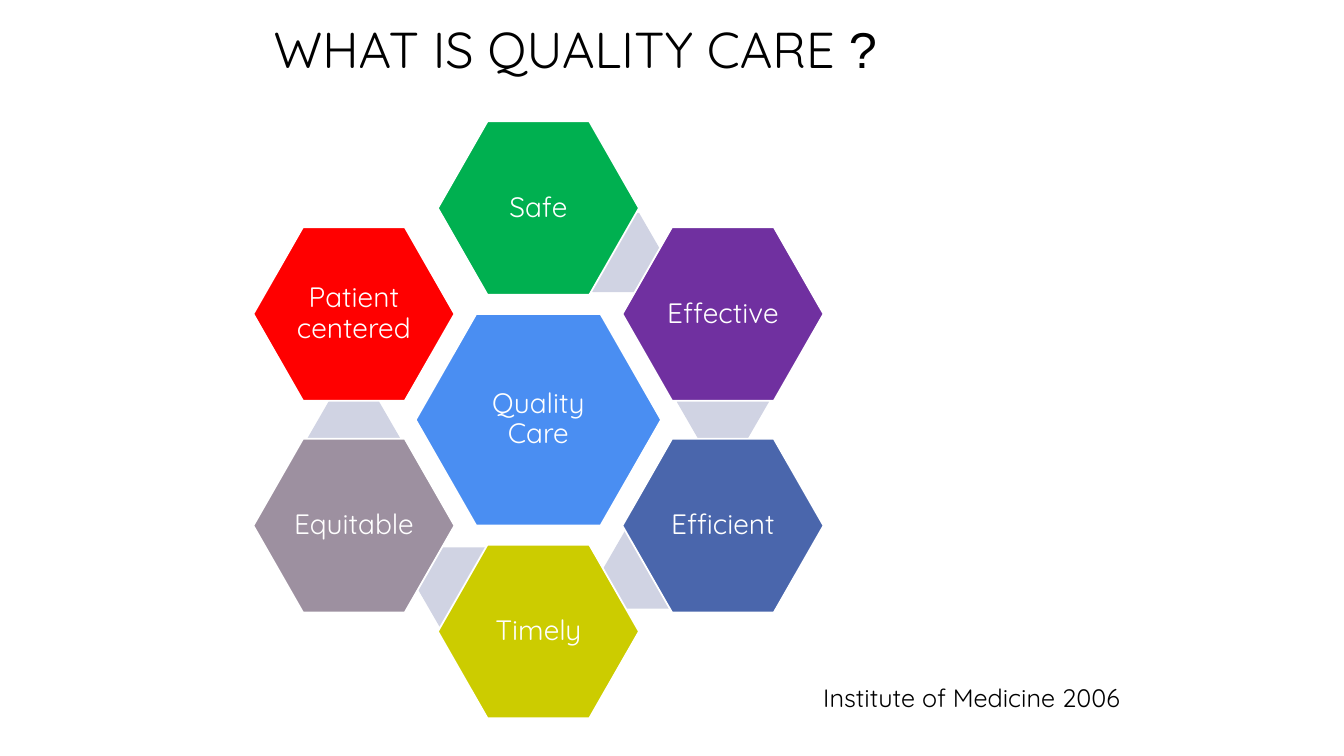
from pptx import Presentation
from pptx.dml.color import RGBColor
from pptx.enum.shapes import MSO_SHAPE
from pptx.enum.text import MSO_ANCHOR, PP_ALIGN
from pptx.util import Inches, Pt

COLORS = {
    "white": "FFFFFF", "black": "000000", "link": "D0D3E3", "core": "4A8EF2",
    "safe": "00B050", "effective": "7030A0", "efficient": "4A66AC",
    "timely": "CCCC00", "equitable": "9D90A0", "patient": "FF0000",
}

# Sizes in columns and rows of the honeycomb grid
CORE_SIZE = (1.33, 2)
PETAL_SIZE = (1.09, 1.64)
LINK_SIZE = (0.5, 0.75)

# Label, colour, petal centre, centre of the link beneath it
PETALS = [
    ("Safe", "safe", (0, -2), (0.42, -1.58)),
    ("Effective", "effective", (1, -1), (1, -0.17)),
    ("Efficient", "efficient", (1, 1), (0.6, 1.41)),
    ("Timely", "timely", (0, 2), (-0.41, 1.58)),
    ("Equitable", "equitable", (-1, 1), (-1, 0.17)),
    ("Patient centered", "patient", (-1, -1), None),
]


def color(name):
    return RGBColor.from_string(COLORS[name])


def write(frame, *runs, size=20, ink="white", align=PP_ALIGN.LEFT,
          anchor=MSO_ANCHOR.TOP, spacing=1.0):
    """Fill a text frame with one paragraph of (text, font) runs."""
    frame.word_wrap = True
    frame.vertical_anchor = anchor
    paragraph = frame.paragraphs[0]
    paragraph.alignment = align
    paragraph.line_spacing = spacing
    for text, typeface in runs:
        run = paragraph.add_run()
        run.text = text
        run.font.name = typeface
        run.font.size = Pt(size)
        run.font.color.rgb = color(ink)


class Honeycomb:
    """A slide on a grid whose origin is the centre of the honeycomb."""
    column, row = 1.83, 1.05
    center_x, center_y = 5.34, 4.165
    typeface = "Quicksand"

    def __init__(self, slide):
        self.slide = slide
        slide.background.fill.solid()
        slide.background.fill.fore_color.rgb = color("white")

    def box(self, left, top, width, height):
        """Turn grid units into slide lengths."""
        return (Inches(self.center_x + left * self.column),
                Inches(self.center_y + top * self.row),
                Inches(width * self.column), Inches(height * self.row))

    def hexagon(self, center, size, fill, slant=0.286):
        corner = [middle - extent / 2 for middle, extent in zip(center, size)]
        cell = self.slide.shapes.add_shape(MSO_SHAPE.HEXAGON,
                                           *self.box(*corner, *size))
        cell.adjustments[0] = slant
        cell.shadow.inherit = False
        cell.fill.solid()
        cell.fill.fore_color.rgb = color(fill)
        cell.line.fill.background()
        return cell

    def labelled_cell(self, label, center, size, fill):
        cell = self.hexagon(center, size, fill)
        cell.line.color.rgb = color("white")
        cell.line.width = Pt(1.25)
        frame = cell.text_frame
        frame.margin_left = frame.margin_right = Inches(0.03)
        frame.margin_top = frame.margin_bottom = Inches(0.03)
        write(frame, (label, self.typeface), align=PP_ALIGN.CENTER,
              anchor=MSO_ANCHOR.MIDDLE, spacing=0.9)

    def link(self, center):
        self.hexagon(center, LINK_SIZE, "link", slant=0.289)

    def caption(self, area, *runs, size, indent=0.1):
        caption = self.slide.shapes.add_textbox(*self.box(*area))
        caption.text_frame.margin_left = Inches(indent)
        write(caption.text_frame, *runs, size=size, ink="black")


def main():
    deck = Presentation()
    deck.slide_width, deck.slide_height = Inches(13.33), Inches(7.5)
    comb = Honeycomb(deck.slides.add_slide(deck.slide_layouts[6]))

    comb.caption((-1.79, -3.84, 4.31, 1.55),
                 ("WHAT IS QUALITY CARE ", comb.typeface), ("?", "Arial"),
                 size=36, indent=0.65)
    comb.labelled_cell("Quality Care", (0, 0), CORE_SIZE, "core")
    for label, fill, center, link_center in PETALS:
        if link_center:
            comb.link(link_center)
        comb.labelled_cell(label, center, PETAL_SIZE, fill)
    comb.caption((1.49, 2.43, 1.89, 0.38),
                 ("Institute of Medicine 2006", comb.typeface), size=18)

    deck.save("out.pptx")


if __name__ == "__main__":
    main()
